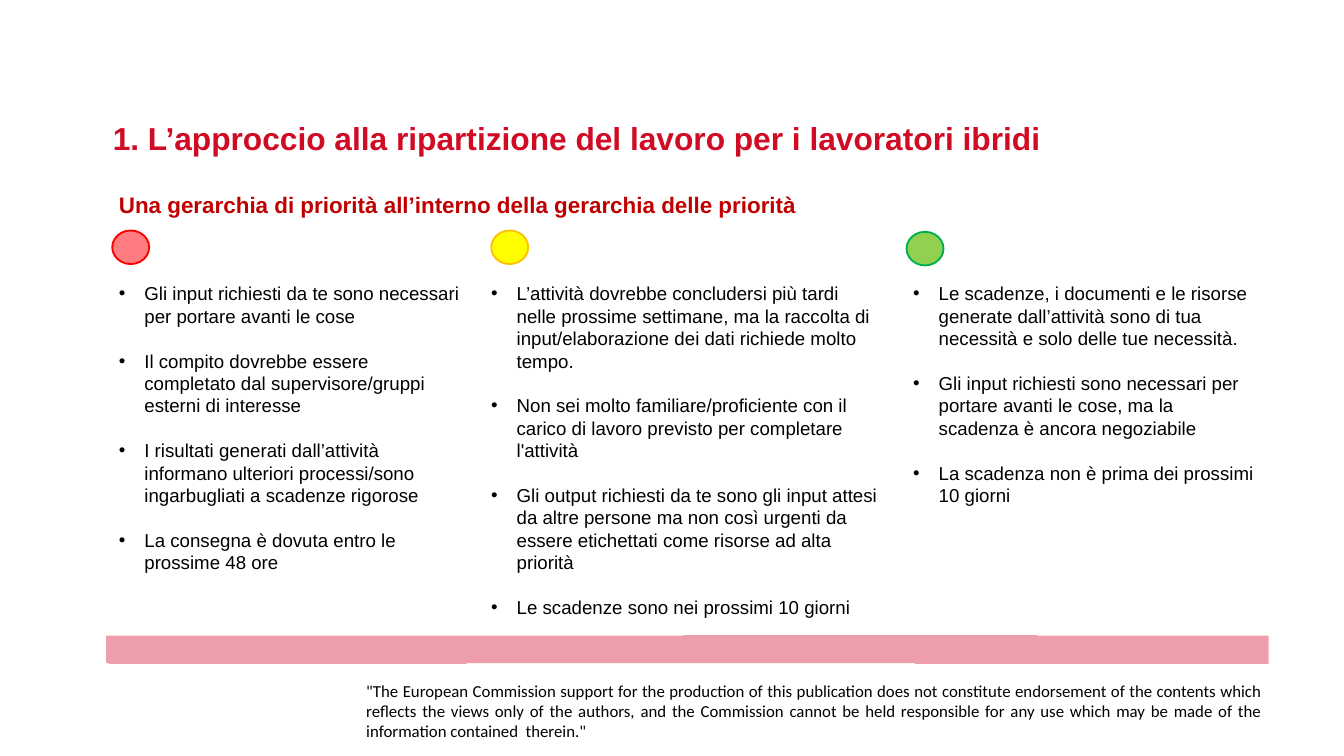
from lxml import etree
from pptx import Presentation
from pptx.dml.color import RGBColor
from pptx.enum.shapes import MSO_SHAPE
from pptx.enum.text import MSO_AUTO_SIZE, PP_ALIGN
from pptx.oxml.ns import qn
from pptx.util import Inches, Pt

COLORS = {
    "title": "D00B24",
    "subtitle": "C00000",
    "text": "000000",
    "bar": "ED9DAB",
}

TITLE = "1. L’approccio alla ripartizione del lavoro per i lavoratori ibridi"
SUBTITLE = "Una gerarchia di priorità all’interno della gerarchia delle priorità"
DISCLAIMER = (
    '"The European Commission support for the production of this publication does not '
    "constitute endorsement of the contents which reflects the views only of the authors, "
    "and the Commission cannot be held responsible for any use which may be made of the "
    'information contained  therein."'
)

# Each priority: column left, width, height; light left, top, fill, line; bullets
PRIORITIES = [
    ((1.67, 5.29, 4.82), (1.67, 3.43, "FF7C80", "FF0000"), [
        "Gli input richiesti da te sono necessari per portare avanti le cose",
        "Il compito dovrebbe essere completato dal supervisore/gruppi esterni di interesse",
        "I risultati generati dall’attività informano ulteriori processi/sono "
        "ingarbugliati a scadenze rigorose",
        "La consegna è dovuta entro le prossime 48 ore",
    ]),
    ((7.21, 6.01, 5.16), (7.31, 3.43, "FFFF00", "FFC000"), [
        "L’attività dovrebbe concludersi più tardi nelle prossime settimane, ma la raccolta "
        "di input/elaborazione dei dati richiede molto tempo.",
        "Non sei molto familiare/proficiente con il carico di lavoro previsto per "
        "completare l'attività",
        "Gli output richiesti da te sono gli input attesi da altre persone ma non così "
        "urgenti da essere etichettati come risorse ad alta priorità",
        "Le scadenze sono nei prossimi 10 giorni",
    ]),
    ((13.49, 5.29, 3.48), (13.49, 3.45, "92D050", "00B050"), [
        "Le scadenze, i documenti e le risorse generate dall’attività sono di tua "
        "necessità e solo delle tue necessità.",
        "Gli input richiesti sono necessari per portare avanti le cose, ma la scadenza è "
        "ancora negoziabile",
        "La scadenza non è prima dei prossimi 10 giorni",
    ]),
]
COLUMN_TOP = 4.15


def rgb(value):
    return RGBColor.from_string(value)


def add_text(page, left, top, width, height, lines, size, color, font="Arial", bold=False):
    """Add a wrapped text box with one paragraph for each line."""
    box = page.shapes.add_textbox(Inches(left), Inches(top), Inches(width), Inches(height))
    frame = box.text_frame
    frame.word_wrap = True
    frame.auto_size = MSO_AUTO_SIZE.SHAPE_TO_FIT_TEXT
    frame.text = "\n".join(lines)
    for para in frame.paragraphs:
        para.font.name = font
        para.font.size = Pt(size)
        para.font.bold = bold
        para.font.color.rgb = rgb(color)
    return frame


def add_bullet(para):
    props = para._p.get_or_add_pPr()
    props.set("marL", str(Inches(0.38)))
    props.set("indent", str(Inches(-0.38)))
    bullet_font = etree.Element(qn("a:buFont"), typeface="Arial")
    bullet = etree.Element(qn("a:buChar"), char="•")
    # Bullet elements come before the default run properties
    props.find(qn("a:defRPr")).addprevious(bullet_font)
    bullet_font.addnext(bullet)


def add_priority(page, column, light, bullets):
    # Traffic light
    left, top, fill, line = light
    circle = page.shapes.add_shape(
        MSO_SHAPE.OVAL, Inches(left), Inches(top), Inches(0.55), Inches(0.5))
    circle.shadow.inherit = False
    circle.fill.solid()
    circle.fill.fore_color.rgb = rgb(fill)
    circle.line.color.rgb = rgb(line)
    circle.line.width = Pt(2)

    # Bullets, one line apart
    left, width, height = column
    frame = add_text(page, left, COLUMN_TOP, width, height, bullets, 20, COLORS["text"])
    for index, para in enumerate(frame.paragraphs):
        para.line_spacing = Pt(24)
        para.space_before = Pt(24 if index else 0)
        add_bullet(para)


def add_footer(page, left, top, width, height):
    # Bar with slightly stepped edges
    right, bottom, step = left + width, top + height, 0.01
    points = [
        (right, top + step), (left + 13.85, top + step), (left + 13.85, top),
        (left + 8.59, top), (left + 8.59, top + step), (left, top + step),
        (left, bottom - step), (left + 0.04, bottom - step), (left + 0.04, bottom),
        (left + 5.36, bottom), (left + 5.36, bottom - step),
        (left + 12.04, bottom - step), (left + 12.04, bottom), (right, bottom),
    ]
    corners = [(Inches(x), Inches(y)) for x, y in points]
    builder = page.shapes.build_freeform(*corners[0])
    builder.add_line_segments(corners[1:], close=True)
    bar = builder.convert_to_shape()
    bar.shadow.inherit = False
    bar.fill.solid()
    bar.fill.fore_color.rgb = rgb(COLORS["bar"])
    bar.line.fill.background()

    # Disclaimer
    frame = add_text(page, left + 3.87, top + 0.7, 13.33, 0.76, [DISCLAIMER], 18,
                     COLORS["text"], font="Calibri")
    frame.margin_left = frame.margin_right = frame.margin_top = frame.margin_bottom = 0
    para = frame.paragraphs[0]
    para.alignment = PP_ALIGN.JUSTIFY
    para.line_spacing = 0.98


def main():
    deck = Presentation()
    deck.slide_width, deck.slide_height = Inches(20), Inches(11.25)
    page = deck.slides.add_slide(deck.slide_layouts[6])

    add_footer(page, 1.58, 9.45, 17.3, 0.43)
    add_text(page, 1.58, 1.72, 15.13, 0.67, [TITLE], 34, COLORS["title"], bold=True)
    add_text(page, 1.67, 2.8, 17.11, 0.5, [SUBTITLE], 24, COLORS["subtitle"], bold=True)
    for column, light, bullets in PRIORITIES:
        add_priority(page, column, light, bullets)

    deck.save("out.pptx")


if __name__ == "__main__":
    main()
